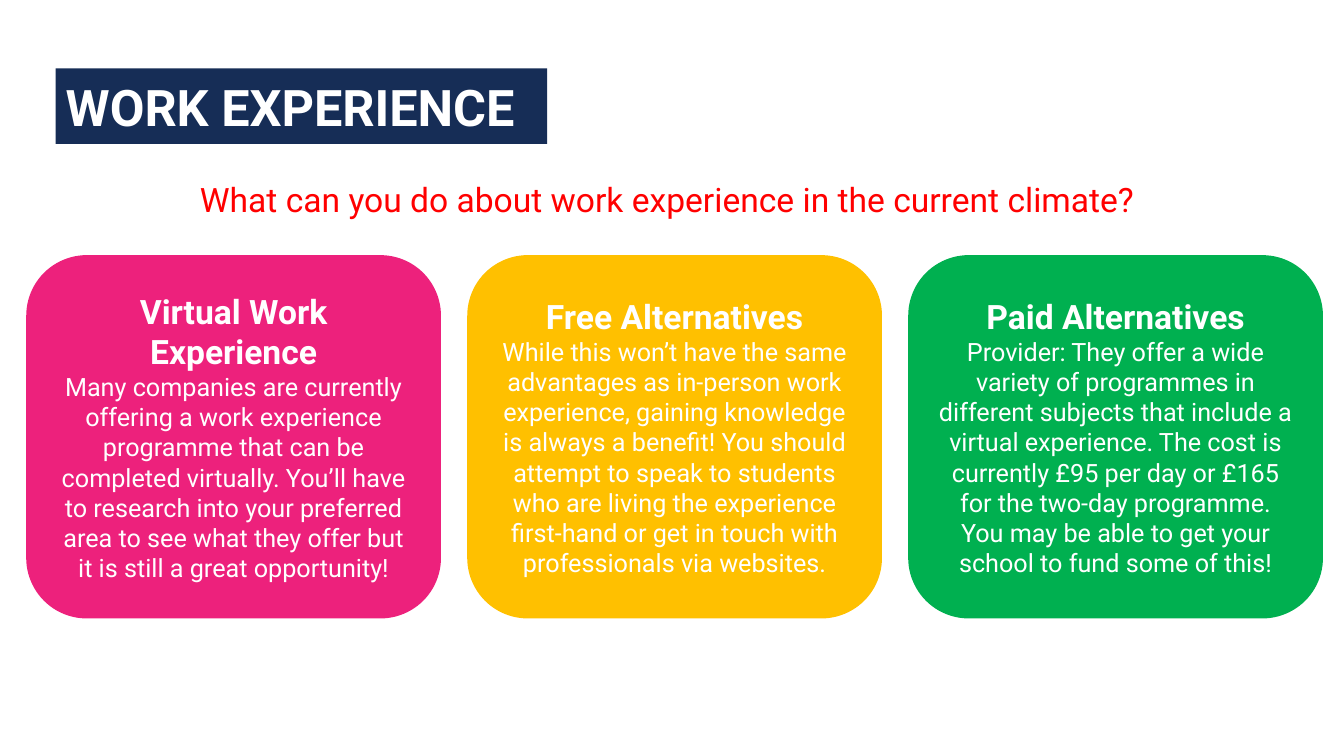
from pptx import Presentation
from pptx.dml.color import RGBColor
from pptx.enum.shapes import MSO_SHAPE
from pptx.enum.text import MSO_ANCHOR, MSO_AUTO_SIZE, PP_ALIGN
from pptx.util import Pt

ROUNDED = MSO_SHAPE.ROUNDED_RECTANGLE
MIDDLE = MSO_ANCHOR.MIDDLE
NO_FIT, GROW = MSO_AUTO_SIZE.NONE, MSO_AUTO_SIZE.SHAPE_TO_FIT_TEXT
LEFT, CENTER = PP_ALIGN.LEFT, PP_ALIGN.CENTER
PX = 9525

TITLE = {"size": Pt(36), "bold": True}
QUESTION = {"size": Pt(24), "bold": False}
HEADING = {"size": Pt(24), "bold": True}
BODY = {"size": Pt(18), "bold": False}

CARDS = [
    ("ED217C", "Virtual Work Experience",
     "Many companies are currently offering a work experience programme that "
     "can be completed virtually. You’ll have to research into your preferred "
     "area to see what they offer but it is still a great opportunity!"),
    ("FFC000", "Free Alternatives",
     "While this won’t have the same advantages as in-person work experience, "
     "gaining knowledge is always a benefit! You should attempt to speak to "
     "students who are living the experience first-hand or get in touch with "
     "professionals via websites."),
    ("00B050", "Paid Alternatives",
     "Provider: They offer a wide variety of programmes in different subjects "
     "that include a virtual experience. The cost is currently £95 per day or "
     "£165 for the two-day programme. You may be able to get your school to "
     "fund some of this!"),
]


def paint(fmt, color):
    fmt.solid()
    fmt.fore_color.rgb = RGBColor.from_string(color)


def write(p, text, style, color, align):
    p.alignment = align
    r = p.add_run()
    r.text = text
    r.font.name = "Roboto"
    for name, value in style.items():
        setattr(r.font, name, value)
    paint(r.font.fill, color)


prs = Presentation()
prs.slide_width, prs.slide_height = 1280 * PX, 720 * PX
s = prs.slides.add_slide(prs.slide_layouts[5])

title = s.shapes.title
title.left, title.top, title.width, title.height = [v * PX for v in (53, 65, 468, 72)]
paint(title.fill, "162D56")
tf = title.text_frame
tf.auto_size = NO_FIT
tf.vertical_anchor = MIDDLE
write(tf.paragraphs[0], "WORK EXPERIENCE", TITLE, "FFFFFF", LEFT)

box = s.shapes.add_textbox(181 * PX, 166 * PX, 920 * PX, 48 * PX)
tf = box.text_frame
tf.word_wrap = False
tf.auto_size = GROW
write(tf.paragraphs[0], "What can you do about work experience in the current climate?",
      QUESTION, "FF0000", LEFT)

for i, (color, heading, body) in enumerate(CARDS):
    sp = s.shapes.add_shape(ROUNDED, (25 + i * 420) * PX, 243 * PX, 395 * PX, 346 * PX)
    sp.shadow.inherit = False
    paint(sp.fill, color)
    sp.line.fill.background()
    tf = sp.text_frame
    tf.word_wrap = True
    tf.vertical_anchor = MIDDLE
    write(tf.paragraphs[0], heading, HEADING, "FFFFFF", CENTER)
    write(tf.add_paragraph(), body, BODY, "FFFFFF", CENTER)

prs.save("out.pptx")
